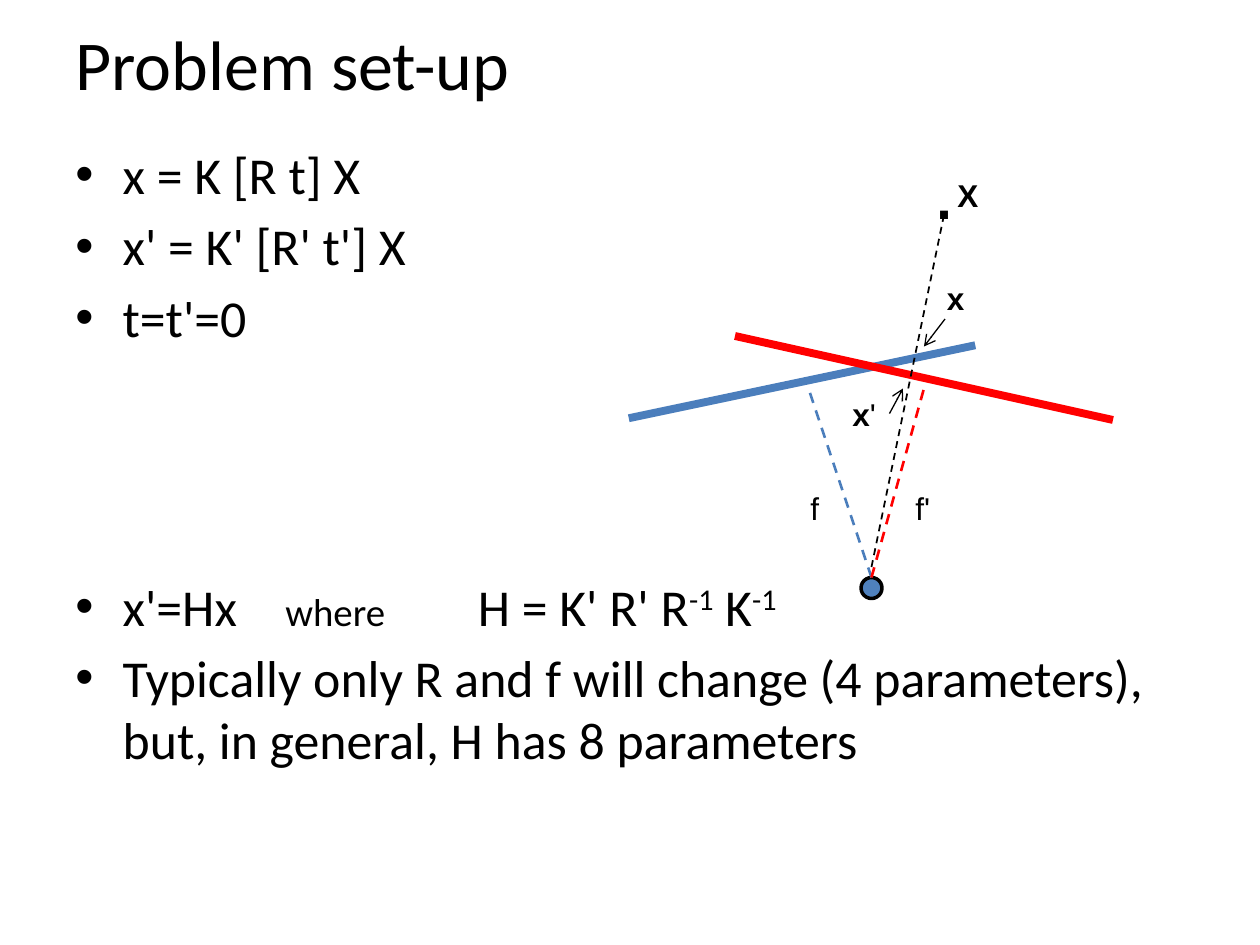
"""Build the problem set-up slide with its two-view rotation diagram."""
import pptx
import pptx.dml.color
import pptx.enum.dml
import pptx.enum.shapes
import pptx.enum.text
import pptx.oxml
import pptx.oxml.ns
import pptx.util

Pt = pptx.util.Pt
BLACK, BLUE, RED = "000000", "4B7EBC", "FF0000"
TITLE = "Problem set-up"
BODY_SIZE, SMALL_SIZE = 29.6, 22.2
BODY_GAP, DIAGRAM_GAP = 5.3, 129.5
INDENT = 27
TAB_STOPS = (120, 230)
# Each bullet: space before, then (text, size, baseline in thousandths)
BULLETS = [
    (BODY_GAP, [("x = K [R t] X", BODY_SIZE, 0)]),
    (BODY_GAP, [("x' = K' [R' t'] X", BODY_SIZE, 0)]),
    (BODY_GAP, [("t=t'=0", BODY_SIZE, 0)]),
    (DIAGRAM_GAP, [
        ("x'=Hx\t", BODY_SIZE, 0), ("where", SMALL_SIZE, 0),
        ("\tH = K' R' R", BODY_SIZE, 0), ("-1", BODY_SIZE, 30000),
        (" K", BODY_SIZE, 0), ("-1", BODY_SIZE, 30000)]),
    (BODY_GAP, [("Typically only R and f will change (4 parameters), "
                 "but, in general, H has 8 parameters", BODY_SIZE, 0)]),
]
CAMERA = (492, 330, 12, 12)
IMAGE_PLANES = [((359.3, 239), (557.3, 197.3), BLUE),
                ((420, 192), (636, 240), RED)]
FOCAL_LINES = [((498, 330), (462, 222), BLUE),
               ((498, 330), (528, 222), RED)]
VIEW_RAY = ((498, 324), (540, 120), BLACK)
POINTERS = [((508.3, 236.3), (516, 222), BLACK),
            ((540, 182.3), (528, 198), BLACK)]
LABELS = [
    ((456, 276, 19.4, 29), 18, [("f", False)]),
    ((516, 276, 23, 29), 18, [("f'", False)]),
    ((528, 90, 24, 46), 32, [(".", True)]),
    ((534, 156, 24.5, 29), 18, [("x", True)]),
    ((480, 222, 28, 29), 18, [("x", True), ("'", False)]),
    ((540, 97.2, 26.6, 29), 18, [("X", True)]),
]


def color(value):
    return pptx.dml.color.RGBColor.from_string(value)


def add_span(para, text, size, font="Calibri", bold=False):
    span = para.add_run()
    span.text = text
    span.font.name = font
    span.font.size = Pt(size)
    span.font.bold = bold
    span.font.color.rgb = color(BLACK)
    return span


def add_child(parent, tag, **attributes):
    child = pptx.oxml.parse_xml(f"<a:{tag} {pptx.oxml.ns.nsdecls('a')}/>")
    for name, value in attributes.items():
        child.set(name, str(value))
    parent.append(child)
    return child


def add_title(page):
    title = page.shapes.title
    title.left, title.top, title.width, title.height = map(Pt, (36, 0, 648, 72))
    title.text_frame.vertical_anchor = pptx.enum.text.MSO_ANCHOR.MIDDLE
    para = title.text_frame.paragraphs[0]
    para.alignment = pptx.enum.text.PP_ALIGN.LEFT
    add_span(para, TITLE, 40)


def add_bullets(page):
    frame = page.shapes.add_textbox(*map(Pt, (36, 78, 648, 404.4))).text_frame
    frame.word_wrap = True
    for index, (gap, spans) in enumerate(BULLETS):
        para = frame.add_paragraph() if index else frame.paragraphs[0]
        para.space_before = Pt(gap)
        properties = para._p.get_or_add_pPr()
        properties.set("marL", str(Pt(INDENT)))
        properties.set("indent", str(-Pt(INDENT)))
        add_child(properties, "buFont", typeface="Arial")
        add_child(properties, "buChar", char="•")
        if any("\t" in text for text, _, _ in spans):
            stops = add_child(properties, "tabLst")
            for stop in TAB_STOPS:
                add_child(stops, "tab", pos=Pt(stop), algn="l")
        for text, size, baseline in spans:
            span = add_span(para, text, size)
            if baseline:
                span._r.get_or_add_rPr().set("baseline", str(baseline))


def add_line(page, start, end, tint, width, dashed=False, arrow=False):
    line = page.shapes.add_connector(
        pptx.enum.shapes.MSO_CONNECTOR.STRAIGHT, *map(Pt, start + end))
    line.line.color.rgb = color(tint)
    line.line.width = Pt(width)
    if dashed:
        line.line.dash_style = pptx.enum.dml.MSO_LINE.DASH
    if arrow:
        add_child(line.line._get_or_add_ln(), "tailEnd", type="arrow")
    add_child(line._element.spPr, "effectLst")
    return line


def add_camera(page):
    camera = page.shapes.add_shape(
        pptx.enum.shapes.MSO_SHAPE.OVAL, *map(Pt, CAMERA))
    camera.shadow.inherit = False
    camera.fill.solid()
    camera.fill.fore_color.rgb = color("4F81BD")
    camera.line.color.rgb = color(BLACK)
    camera.line.width = Pt(2)
    return camera


def add_label(page, place, size, spans):
    frame = page.shapes.add_textbox(*map(Pt, place)).text_frame
    frame.word_wrap = False
    frame.auto_size = pptx.enum.text.MSO_AUTO_SIZE.SHAPE_TO_FIT_TEXT
    for text, bold in spans:
        add_span(frame.paragraphs[0], text, size, "Arial", bold)


def add_diagram(page):
    for plane in IMAGE_PLANES:
        add_line(page, *plane, 4.5)
    camera = add_camera(page)
    for focal_line in FOCAL_LINES:
        add_line(page, *focal_line, 1.5, dashed=True).begin_connect(camera, 0)
    add_line(page, *VIEW_RAY, 1, dashed=True)
    for pointer in POINTERS:
        add_line(page, *pointer, 0.75, arrow=True)
    for label in LABELS:
        add_label(page, *label)


def main():
    deck = pptx.Presentation()
    deck.slide_width, deck.slide_height = Pt(720), Pt(540)
    page = deck.slides.add_slide(deck.slide_layouts[5])
    add_title(page)
    add_bullets(page)
    add_diagram(page)
    deck.save("out.pptx")


if __name__ == "__main__":
    main()
